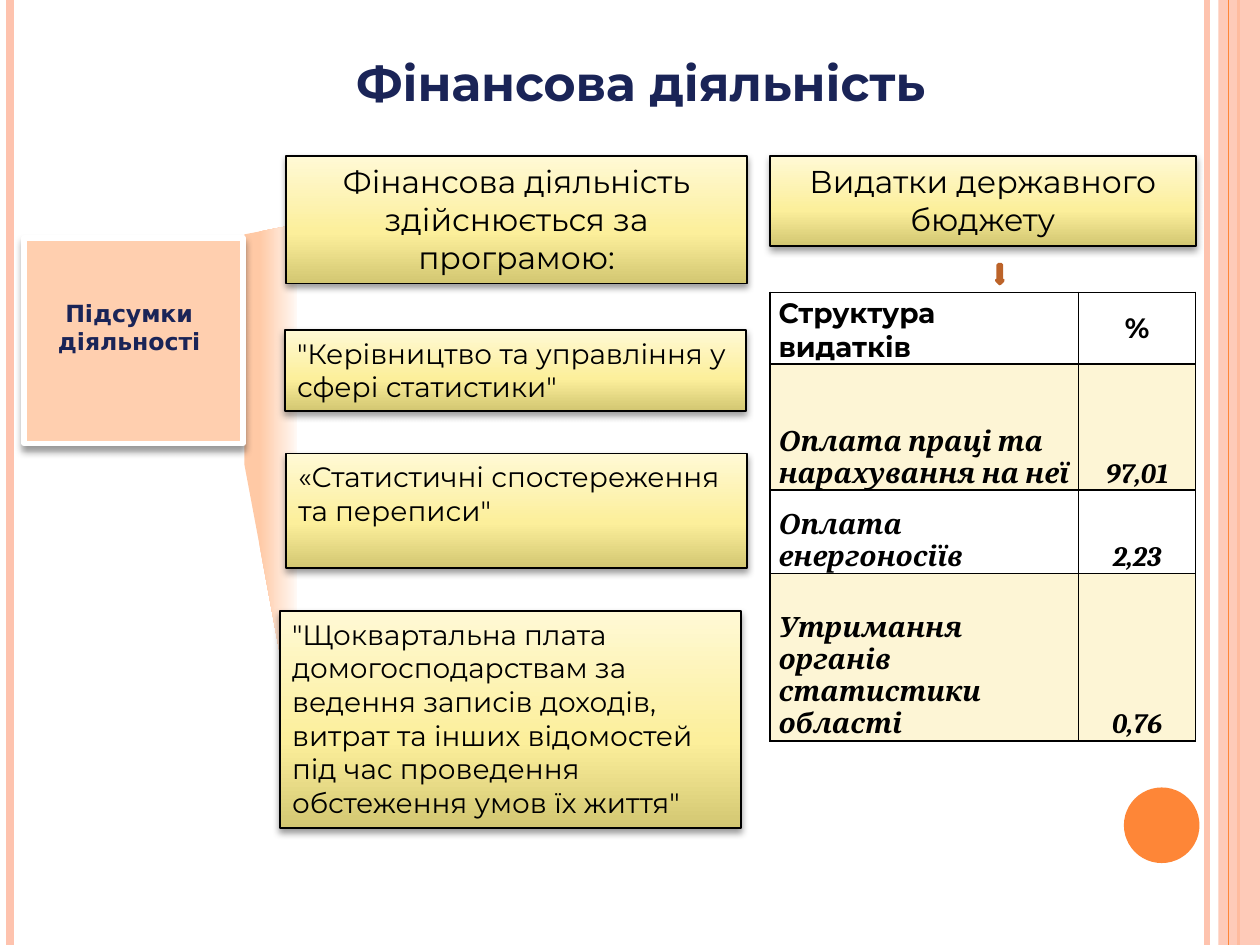
from lxml import etree
from pptx import Presentation
from pptx.dml.color import RGBColor
from pptx.enum.shapes import MSO_CONNECTOR, MSO_SHAPE
from pptx.enum.text import MSO_ANCHOR, PP_ALIGN
from pptx.oxml import parse_xml
from pptx.oxml.ns import qn
from pptx.util import Inches, Pt

NS = 'xmlns:a="http://schemas.openxmlformats.org/drawingml/2006/main"'
LINE, RECT = MSO_CONNECTOR.STRAIGHT, MSO_SHAPE.RECTANGLE
OVAL, ARROW = MSO_SHAPE.OVAL, MSO_SHAPE.DOWN_ARROW
LEFT, CENTER = PP_ALIGN.LEFT, PP_ALIGN.CENTER
TOP, MIDDLE, BOTTOM = MSO_ANCHOR.TOP, MSO_ANCHOR.MIDDLE, MSO_ANCHOR.BOTTOM
HEX = {"pink": "FEC3AE", "orange": "FE8637", "rust": "BC6329",
       "peach": "FFCFAF", "navy": "1A2457", "black": "000000",
       "white": "FFFFFF", "band": "FDF5D5"}
RGB = {name: RGBColor.from_string(code) for name, code in HEX.items()}
GOLD = [(0, "D3C772"), (40, "FCEF9B"), (100, "FFF9D5")]
FADE = [(0, "FFC9A5"), (28, "FFC9A5"), (100, "FFF9F5")]


def write(frame, text, align=LEFT, anchor=TOP, **font):
    frame.word_wrap = True
    frame.vertical_anchor = anchor
    para = frame.paragraphs[0]
    para.alignment = align
    run = para.add_run()
    run.text = text
    run.font.color.rgb = RGB[font.pop("color", "black")]
    for key, value in font.items():
        setattr(run.font, key, value)


def paint(shape, fill, line=None, width=1, drop=0):
    """Fill with a colour name or gradient stops; drop is the shadow offset in points."""
    shape.shadow.inherit = False
    props = shape._element.spPr
    if isinstance(fill, str):
        shape.fill.solid()
        shape.fill.fore_color.rgb = RGB[fill]
    else:
        angle = 16200000 if fill is GOLD else 0
        stops = "".join(f'<a:gs pos="{pos * 1000}"><a:srgbClr val="{code}"/></a:gs>'
                        for pos, code in fill)
        shape.fill.solid()
        old = props.find(qn("a:solidFill"))
        props.replace(old, parse_xml(
            f'<a:gradFill {NS} rotWithShape="1"><a:gsLst>{stops}</a:gsLst>'
            f'<a:lin ang="{angle}" scaled="0"/></a:gradFill>'))
    if line:
        shape.line.color.rgb = RGB[line]
        shape.line.width = Pt(width)
    else:
        shape.line.fill.background()
    if drop:
        props.find(qn("a:effectLst")).append(parse_xml(
            f'<a:outerShdw {NS} blurRad="{Pt(4)}" dist="{Pt(drop)}" dir="5400000" '
            'rotWithShape="0"><a:srgbClr val="000000"><a:alpha val="40000"/>'
            '</a:srgbClr></a:outerShdw>'))


prs = Presentation()
prs.slide_width, prs.slide_height = Inches(10), Inches(7.5)
slide = prs.slides.add_slide(prs.slide_layouts[5])
shapes = slide.shapes

# Side stripes: the translucent band lies over the thicker orange line
for x, color, width in [(9.58, "pink", 3), (0.08, "pink", 4.5),
                        (9.83, "orange", 1.5), (9.75, "orange", 0.75)]:
    if x == 9.75:
        band = shapes.add_shape(RECT, Inches(9.67), 0, Inches(0.33), Inches(7.5))
        paint(band, "pink")
        tint = band._element.spPr.find(qn("a:solidFill"))[0]
        etree.SubElement(tint, qn("a:alpha"), val="87000")
    stripe = shapes.add_connector(LINE, Inches(x), 0, Inches(x), Inches(7.5))
    stripe.line.color.rgb = RGB[color]
    stripe.line.width = Pt(width)
    etree.SubElement(stripe._element.spPr, qn("a:effectLst"))

dot = shapes.add_shape(OVAL, Inches(8.92), Inches(6.25), Inches(0.6), Inches(0.6))
paint(dot, "orange")

# Title
title = shapes.title
for key, value in {"left": 1.3, "top": 0.37, "width": 7.68, "height": 0.57}.items():
    setattr(title, key, Inches(value))
write(title.text_frame, "Фінансова діяльність ", CENTER, TOP,
      name="Montserrat", size=Pt(28), bold=True, color="navy")

# Summary panel and the beam that opens from it
pen = shapes.build_freeform(Inches(2.36), Inches(5.93))
pen.add_line_segments([(Inches(x), Inches(y)) for x, y in
                       [(1.94, 3.69), (1.94, 1.86), (2.36, 1.78)]], close=True)
paint(pen.convert_to_shape(), FADE)
panel = shapes.add_shape(RECT, Inches(0.19), Inches(1.89), Inches(1.74), Inches(1.63))
paint(panel, "peach", "white", 3, 3)
label = shapes.add_textbox(Inches(0.34), Inches(2.32), Inches(1.37), Inches(0.78))
write(label.text_frame, "Підсумки діяльності", CENTER,
      name="DejaVu Sans", size=Pt(13.5), bold=True, color="navy")

# Gold cards
cards = [
    (2.27, 1.24, 3.66, 1.01, 18, "Фінансова діяльність здійснюється за програмою:"),
    (2.26, 2.62, 3.66, 0.64, 16, '"Керівництво та управління у сфері статистики"'),
    (2.22, 4.85, 3.66, 1.72, 16,
     '"Щоквартальна плата домогосподарствам за ведення записів доходів, витрат та '
     'інших відомостей під час проведення обстеження умов їх життя"'),
    (2.27, 3.6, 3.66, 0.91, 16, '«Статистичні спостереження та переписи"'),
    (6.11, 1.24, 3.38, 0.71, 18, "Видатки державного бюджету"),
]
for *box, size, text in cards:
    card = shapes.add_shape(RECT, *map(Inches, box))
    paint(card, GOLD, "black", 1, 2)
    write(card.text_frame, text, CENTER if size == 18 else LEFT,
          name="Montserrat", size=Pt(size))

arrow = shapes.add_shape(ARROW, Inches(7.91), Inches(2.1), Inches(0.05), Inches(0.15))
paint(arrow, "orange", "rust", 2)

# Spending table
rows = [("Структура видатків", "%", 0.57),
        ("Оплата праці та нарахування на неї", "97,01", 1),
        ("Оплата енергоносіїв", "2,23", 0.66),
        ("Утримання органів статистики області", "0,76", 1.33)]
table = shapes.add_table(4, 2, Inches(6.11), Inches(2.32),
                         Inches(3.38), Inches(3.56)).table
for col, width in zip(table.columns, (2.45, 0.93)):
    col.width = Inches(width)
for r, (*texts, height) in enumerate(rows):
    table.rows[r].height = Inches(height)
    for c, text in enumerate(texts):
        cell = table.cell(r, c)
        for key, value in {"margin_left": 0.07, "margin_right": 0.07,
                           "margin_top": 0, "margin_bottom": 0}.items():
            setattr(cell, key, Inches(value))
        write(cell.text_frame, text, CENTER if c else LEFT,
              name="Cambria" if r else "Montserrat", size=Pt(16),
              bold=True, italic=r > 0)
        cell.vertical_anchor = MIDDLE if (r, c) == (0, 1) else BOTTOM
        cell.fill.solid()
        cell.fill.fore_color.rgb = RGB["band" if r % 2 else "white"]
        for i, side in enumerate(("lnL", "lnR", "lnT", "lnB")):
            cell._tc.get_or_add_tcPr().insert(i, parse_xml(
                f'<a:{side} {NS} w="{Pt(1)}"><a:solidFill><a:srgbClr '
                f'val="{HEX["black"]}"/></a:solidFill></a:{side}>'))

prs.save("out.pptx")
